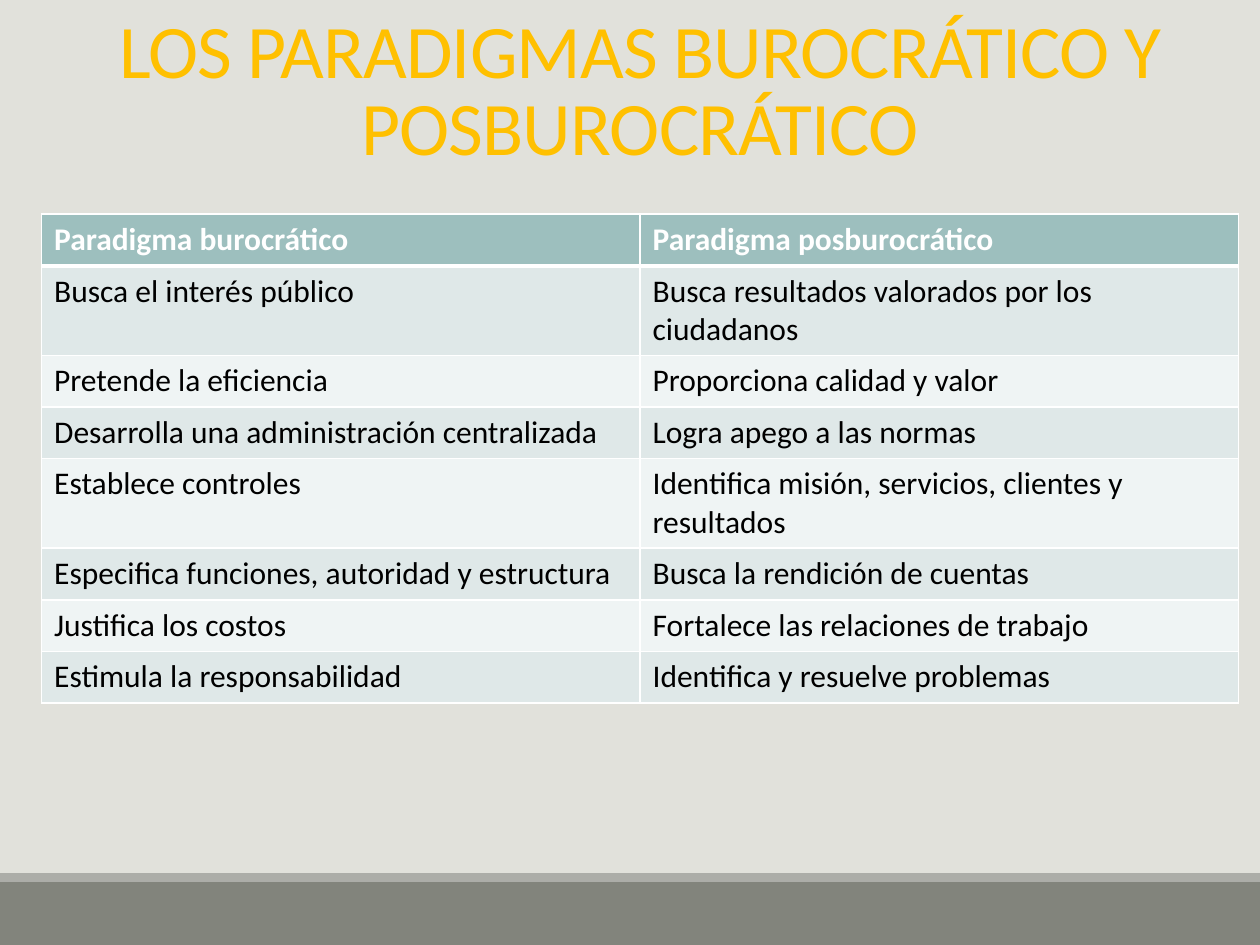
from dataclasses import dataclass

from lxml import etree
from pptx import Presentation
from pptx import util as u
from pptx.dml.color import RGBColor
from pptx.enum import shapes, text
from pptx.oxml import ns

SLIDE_W, SLIDE_H = 10, 7.5
LEFT, CONTENT_W = 0.33, 9.5
TABLE_TOP, ROW_H = 1.7, 0.41


@dataclass(frozen=True)
class Theme:
    font: str = "Calibri"
    background: str = "E1E1DB"
    footer: str = "82847C"
    footer_edge: str = "ACADA8"
    title: str = "FFC000"
    header: str = "9DBFBE"
    bands: tuple = ("DFE8E8", "EFF4F4")
    light: str = "FFFFFF"
    dark: str = "000000"
    title_size: float = 43.2
    table_size: float = 18


THEME = Theme()

TITLE = "LOS PARADIGMAS BUROCRÁTICO Y POSBUROCRÁTICO"
PARADIGMS = [
    ("Paradigma burocrático", "Paradigma posburocrático"),
    ("Busca el interés público", "Busca resultados valorados por los ciudadanos"),
    ("Pretende la eficiencia", "Proporciona calidad y valor"),
    ("Desarrolla una administración centralizada", "Logra apego a las normas"),
    ("Establece controles", "Identifica misión, servicios, clientes y resultados"),
    ("Especifica funciones, autoridad y estructura", "Busca la rendición de cuentas"),
    ("Justifica los costos", "Fortalece las relaciones de trabajo"),
    ("Estimula la responsabilidad", "Identifica y resuelve problemas"),
]


def set_all(target, values):
    for name, value in values.items():
        setattr(target, name, value)


def paint(fill, color):
    fill.solid()
    fill.fore_color.rgb = RGBColor.from_string(color)


def write(frame, words, size, color, bold=False):
    """Put one formatted run in the frame and return its paragraph and run."""
    paragraph = frame.paragraphs[0]
    run = paragraph.add_run()
    run.text = words
    set_all(run.font, {"name": THEME.font, "size": u.Pt(size), "bold": bold})
    run.font.color.rgb = RGBColor.from_string(color)
    return paragraph, run


def add_band(slide, top, height, color):
    band = slide.shapes.add_shape(
        shapes.MSO_SHAPE.RECTANGLE, 0, u.Inches(top), u.Inches(SLIDE_W), u.Inches(height))
    band.shadow.inherit = False
    paint(band.fill, color)
    band.line.fill.background()


def add_title(slide):
    title = slide.shapes.title
    set_all(title, {"left": u.Inches(LEFT), "top": u.Inches(0.31),
                    "width": u.Inches(CONTENT_W), "height": u.Inches(1.1)})
    set_all(title.text_frame, {"word_wrap": True,
                               "auto_size": text.MSO_AUTO_SIZE.NONE,
                               "vertical_anchor": text.MSO_ANCHOR.BOTTOM})
    paragraph, run = write(title.text_frame, TITLE, THEME.title_size, THEME.title)
    set_all(paragraph, {"alignment": text.PP_ALIGN.CENTER, "line_spacing": 0.85})
    run.font._element.set("spc", "-50")  # tighter letters, in hundredths of a point


def add_borders(cell, widths):
    """Draw the cell's edges; widths maps L, R, T and B to points."""
    properties = cell._tc.get_or_add_tcPr()
    for side, width in widths.items():
        edge = etree.SubElement(properties, ns.qn(f"a:ln{side}"), w=str(u.Pt(width)))
        solid = etree.SubElement(edge, ns.qn("a:solidFill"))
        etree.SubElement(solid, ns.qn("a:srgbClr"), val=THEME.light)


def add_paradigm_table(slide):
    rows, columns = len(PARADIGMS), len(PARADIGMS[0])
    table = slide.shapes.add_table(
        rows, columns, u.Inches(LEFT), u.Inches(TABLE_TOP),
        u.Inches(CONTENT_W), u.Inches(ROW_H * rows)).table
    for r, pair in enumerate(PARADIGMS):
        is_header = r == 0
        color = THEME.header if is_header else THEME.bands[(r - 1) % 2]
        ink = THEME.light if is_header else THEME.dark
        # The rule under the header is heavier than the others
        widths = {"L": 1, "R": 1, "T": 3 if r == 1 else 1, "B": 3 if is_header else 1}
        for c, words in enumerate(pair):
            cell = table.cell(r, c)
            write(cell.text_frame, words, THEME.table_size, ink, is_header)
            add_borders(cell, widths)
            paint(cell.fill, color)


def main():
    deck = Presentation()
    set_all(deck, {"slide_width": u.Inches(SLIDE_W), "slide_height": u.Inches(SLIDE_H)})
    slide = deck.slides.add_slide(deck.slide_layouts[5])  # title only
    paint(slide.background.fill, THEME.background)

    # Footer
    add_band(slide, 7, 0.5, THEME.footer)
    add_band(slide, 6.93, 0.07, THEME.footer_edge)

    # Content
    add_title(slide)
    add_paradigm_table(slide)
    deck.save("out.pptx")


if __name__ == "__main__":
    main()
